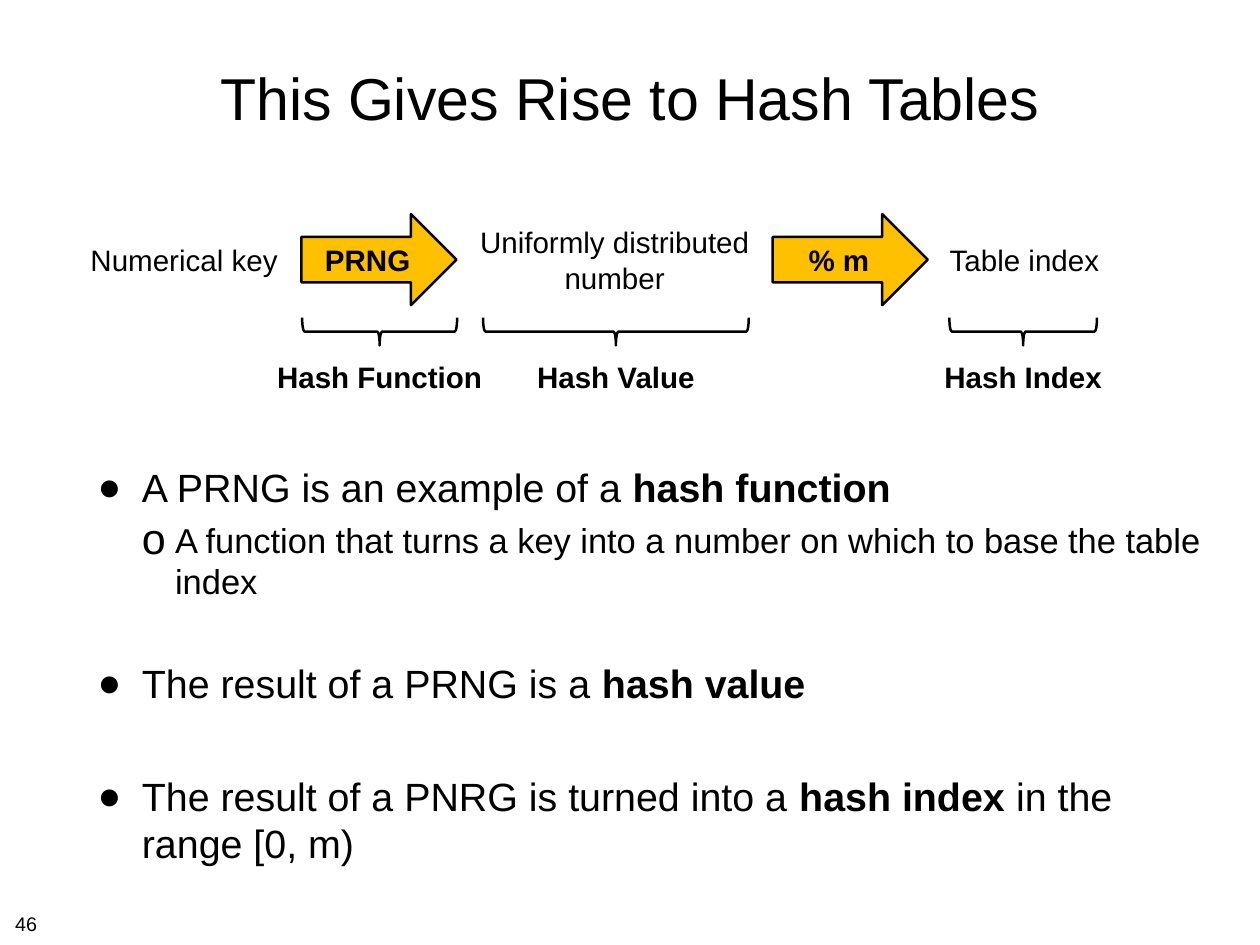
from lxml import etree
from pptx import Presentation
from pptx.dml.color import RGBColor
from pptx.enum.shapes import MSO_SHAPE
from pptx.enum.text import MSO_ANCHOR, PP_ALIGN
from pptx.oxml.ns import qn
from pptx.util import Pt

ARROW, BRACE = MSO_SHAPE.RIGHT_ARROW, MSO_SHAPE.RIGHT_BRACE
LEFT, CENTER = PP_ALIGN.LEFT, PP_ALIGN.CENTER
TOP, MIDDLE = MSO_ANCHOR.TOP, MSO_ANCHOR.MIDDLE

COLORS = {"ink": "000000", "arrow": "FFC000"}
FONT = "Arial"
SLIDE_SIZE = (1024, 768)
INSET = 4.32

TITLE = ("This Gives Rise to Hash Tables", (75, 20, 874, 118))
PAGE_NUMBER = ("46", (8, 736.5, 27, 25))
BODY_AREA = (75, 372, 905, 348)

FLOW_MIDDLE = 211
FLOW_LABELS = [
    ("Numerical key", 149.5, 168, 36),
    ("Uniformly distributed\nnumber", 499.5, 241, 66),
    ("Table index", 832.5, 137, 36),
]
ARROWS = [("PRNG", 308), ("% m", 691)]
ARROW_SIZE = (126, 74)

BRACE_MIDDLE, BRACE_DEPTH = 269.5, 22.5
CAPTION_MIDDLE = 306
CAPTIONS = [
    ("Hash Function", 308.5, 126),
    ("Hash Value", 500.5, 216),
    ("Hash Index", 831.5, 120),
]

LEVELS = [
    {"size": 32, "margin": 36, "hanging": 36, "bullet": "●", "scale": 100},
    {"size": 28, "margin": 63, "hanging": 27, "bullet": "o", "scale": 125},
]
BULLETS = [
    (0, 8, [("A PRNG is an example of a ", False), ("hash function", True)]),
    (1, 7, [("A function that turns a key into a number on which to base "
             "the table index", False)]),
    (0, 47, [("The result of a PRNG is a ", False), ("hash value", True)]),
    (0, 53, [("The result of a PNRG is turned into a ", False),
             ("hash index ", True), ("in the range [0, m)", False)]),
]


def color(name):
    return RGBColor.from_string(COLORS[name])


def centered(x, y, width, height):
    return x - width / 2, y - height / 2, width, height


def style_span(span, size, bold=False):
    for name, value in {"name": FONT, "size": Pt(size), "bold": bold}.items():
        setattr(span.font, name, value)
    span.font.color.rgb = color("ink")


def set_frame(frame, wrap, anchor, inset=INSET):
    settings = {"word_wrap": wrap, "vertical_anchor": anchor}
    for side in ("left", "top", "right", "bottom"):
        settings["margin_" + side] = Pt(inset)
    for name, value in settings.items():
        setattr(frame, name, value)


def write(shape, text, size, bold=False, align=CENTER, wrap=False, anchor=MIDDLE):
    set_frame(shape.text_frame, wrap, anchor)
    para = shape.text_frame.paragraphs[0]
    para.text = text
    para.alignment = align
    for span in para.runs:
        style_span(span, size, bold)


def add_box(page, area):
    return page.shapes.add_textbox(*map(Pt, area))


def add_outlined(page, kind, area):
    shape = page.shapes.add_shape(kind, *map(Pt, area))
    shape.shadow.inherit = False
    shape.line.color.rgb = color("ink")
    shape.line.width = Pt(2)
    return shape


def add_flow(page):
    for text, x, width, height in FLOW_LABELS:
        write(add_box(page, centered(x, FLOW_MIDDLE, width, height)), text, 24)
    for text, x in ARROWS:
        arrow = add_outlined(page, ARROW, centered(x, FLOW_MIDDLE, *ARROW_SIZE))
        arrow.fill.solid()
        arrow.fill.fore_color.rgb = color("arrow")
        write(arrow, text, 24, bold=True, wrap=True)
    for text, x, span_width in CAPTIONS:
        brace = add_outlined(
            page, BRACE, centered(x, BRACE_MIDDLE, BRACE_DEPTH, span_width))
        brace.rotation = 90
        brace.fill.background()
        caption = add_box(page, centered(x, CAPTION_MIDDLE, 180, 36))
        write(caption, text, 24, bold=True)


def set_bullet(para, level):
    properties = para._p.get_or_add_pPr()
    properties.set("marL", str(Pt(level["margin"])))
    properties.set("indent", str(-Pt(level["hanging"])))
    for tag, name, value in (
        ("a:buSzPct", "val", str(level["scale"] * 1000)),
        ("a:buFont", "typeface", FONT),
        ("a:buChar", "char", level["bullet"]),
    ):
        etree.SubElement(properties, qn(tag)).set(name, value)


def add_body(page):
    frame = add_box(page, BODY_AREA).text_frame
    set_frame(frame, True, TOP)
    for index, (depth, space, spans) in enumerate(BULLETS):
        para = frame.add_paragraph() if index else frame.paragraphs[0]
        para.level = depth
        para.space_before = Pt(space)
        set_bullet(para, LEVELS[depth])
        for text, bold in spans:
            span = para.add_run()
            span.text = text
            style_span(span, LEVELS[depth]["size"], bold)


def main():
    """Build the hash table slide."""
    deck = Presentation()
    deck.slide_width, deck.slide_height = map(Pt, SLIDE_SIZE)
    page = deck.slides.add_slide(deck.slide_layouts[6])
    text, area = TITLE
    write(add_box(page, area), text, 48, wrap=True)
    add_body(page)
    add_flow(page)
    text, area = PAGE_NUMBER
    write(add_box(page, area), text, 16, align=LEFT, anchor=TOP)
    deck.save("out.pptx")


if __name__ == "__main__":
    main()
